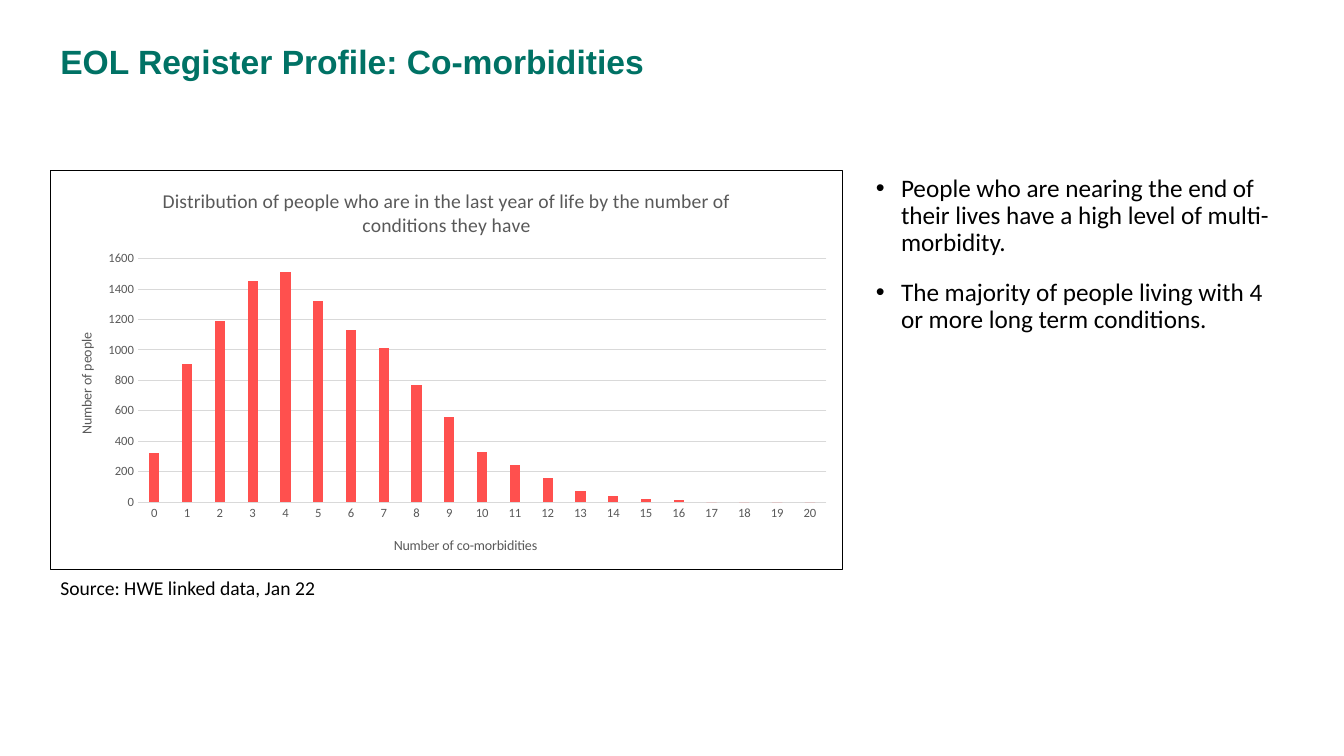
from dataclasses import dataclass

from lxml.etree import SubElement
from pptx import Presentation
from pptx.chart.data import CategoryChartData
from pptx.dml.color import RGBColor
from pptx.enum.chart import XL_CHART_TYPE, XL_TICK_MARK
from pptx.oxml import parse_xml
from pptx.oxml.ns import nsdecls, qn
from pptx.util import Pt


@dataclass(frozen=True)
class Theme:
    heading_font: str = "Arial"
    body_font: str = "Calibri"
    heading: str = "007265"
    ink: str = "000000"
    chart_text: str = "595959"
    grid: str = "D9D9D9"
    bar: str = "FF504E"
    heading_size: float = 24
    body_size: float = 18
    small_size: float = 14
    axis_title_size: float = 10
    tick_size: float = 9
    rule: float = 0.75


THEME = Theme()
PEOPLE = [320, 910, 1190, 1450, 1510, 1320, 1130, 1010, 770, 560, 330,
          240, 160, 70, 40, 20, 10, 0, 0, 0, 0]
FINDINGS = [
    "People who are nearing the end of their lives have a high level of multi-morbidity.",
    "The majority of people living with 4 or more long term conditions.",
]


def style_font(font, size, color, name=THEME.body_font, bold=False):
    font.size, font.name, font.bold = Pt(size), name, bold
    font.color.rgb = RGBColor.from_string(color)


def add_text(slide, box, paragraphs, size, color=THEME.ink, font=THEME.body_font,
             bold=False, line_spacing=1.0, gap_before=0, gap_after=0, bullet_indent=0):
    frame = slide.shapes.add_textbox(*map(Pt, box)).text_frame
    frame.word_wrap = True
    for index, text in enumerate(paragraphs):
        paragraph = frame.add_paragraph() if index else frame.paragraphs[0]
        paragraph.text = text
        paragraph.line_spacing = line_spacing
        paragraph.space_before = Pt(gap_before if index else 0)
        paragraph.space_after = Pt(gap_after)
        if bullet_indent:
            properties = paragraph._p.get_or_add_pPr()
            properties.set("marL", str(Pt(bullet_indent)))
            properties.set("indent", str(-Pt(bullet_indent)))
            SubElement(properties, qn("a:buFont")).set("typeface", "Arial")
            SubElement(properties, qn("a:buChar")).set("char", "•")
        style_font(paragraph.font, size, color, font, bold)


def set_layout(parent, position, **fractions):
    """Place a chart part at fractions (x, y, w, h) of the chart's size."""
    for old in parent.findall(qn("c:layout")):
        parent.remove(old)
    layout = parse_xml(f"<c:layout {nsdecls('c')}><c:manualLayout/></c:layout>")
    settings = {"xMode": "edge", "yMode": "edge", **fractions}
    if "w" in fractions:
        settings = {"layoutTarget": "inner", **settings}
    for key, value in settings.items():
        SubElement(layout[0], qn(f"c:{key}")).set("val", str(value))
    parent.insert(position, layout)


def set_title(owner_title, text, size):
    frame = owner_title.text_frame
    frame.text = text
    style_font(frame.paragraphs[0].font, size, THEME.chart_text)


def style_axis(axis, title, x, y):
    axis.major_tick_mark = axis.minor_tick_mark = XL_TICK_MARK.NONE
    style_font(axis.tick_labels.font, THEME.tick_size, THEME.chart_text)
    set_title(axis.axis_title, title, THEME.axis_title_size)
    set_layout(axis.axis_title._element, 1, x=x, y=y)


def style_line(line, color):
    line.color.rgb = RGBColor.from_string(color)
    line.width = Pt(THEME.rule)


def add_distribution_chart(slide, box):
    data = CategoryChartData()
    data.categories = [str(count) for count in range(len(PEOPLE))]
    data.add_series("Number of people", PEOPLE)
    chart = slide.shapes.add_chart(
        XL_CHART_TYPE.COLUMN_CLUSTERED, *map(Pt, box), data).chart
    style_font(chart.font, THEME.axis_title_size, THEME.ink)
    chart.has_legend = False
    set_title(chart.chart_title, "Distribution of people who are in the last year of life "
              "by the number of conditions they have", THEME.small_size)

    conditions, people = chart.category_axis, chart.value_axis
    style_axis(conditions, "Number of co-morbidities", 0.43, 0.91)
    style_axis(people, "Number of people", 0.03, 0.4)
    style_line(conditions.format.line, THEME.grid)
    people.minimum_scale, people.maximum_scale, people.major_unit = 0, 1600, 200
    people.format.line.fill.background()
    style_line(people.major_gridlines.format.line, THEME.grid)

    plot = chart.plots[0]
    plot.gap_width, plot.overlap, plot.vary_by_categories = 219, -27, False
    bars = plot.series[0].format.fill
    bars.solid()
    bars.fore_color.rgb = RGBColor.from_string(THEME.bar)

    chart_part = chart.element.find(qn("c:chart"))
    set_layout(chart_part.find(qn("c:plotArea")), 0, x=0.11, y=0.22, w=0.87, h=0.61)
    chart_part.addnext(parse_xml(
        f'<c:spPr {nsdecls("c", "a")}><a:noFill/><a:ln w="{Pt(THEME.rule)}"><a:solidFill>'
        f'<a:srgbClr val="{THEME.ink}"/></a:solidFill></a:ln></c:spPr>'))


def add_profile_slide(deck, left=36, top=121.7, chart_width=566, chart_height=285.8):
    slide = deck.slides.add_slide(deck.slide_layouts[6])
    add_text(slide, (left, 28.8, 895, 104), ["EOL Register Profile: Co-morbidities"],
             THEME.heading_size, THEME.heading, THEME.heading_font, bold=True,
             line_spacing=0.9)
    add_distribution_chart(slide, (left, top, chart_width, chart_height))
    add_text(slide, (left, top + chart_height, 453, 24.5),
             ["Source: HWE linked data, Jan 22"], THEME.small_size)
    add_text(slide, (left + chart_width + 16.5, top, 306, 296.6), FINDINGS,
             THEME.body_size, line_spacing=0.9, gap_before=10, gap_after=6,
             bullet_indent=18)


def main():
    deck = Presentation()
    deck.slide_width, deck.slide_height = Pt(960), Pt(540)
    add_profile_slide(deck)
    deck.save("out.pptx")


if __name__ == "__main__":
    main()
